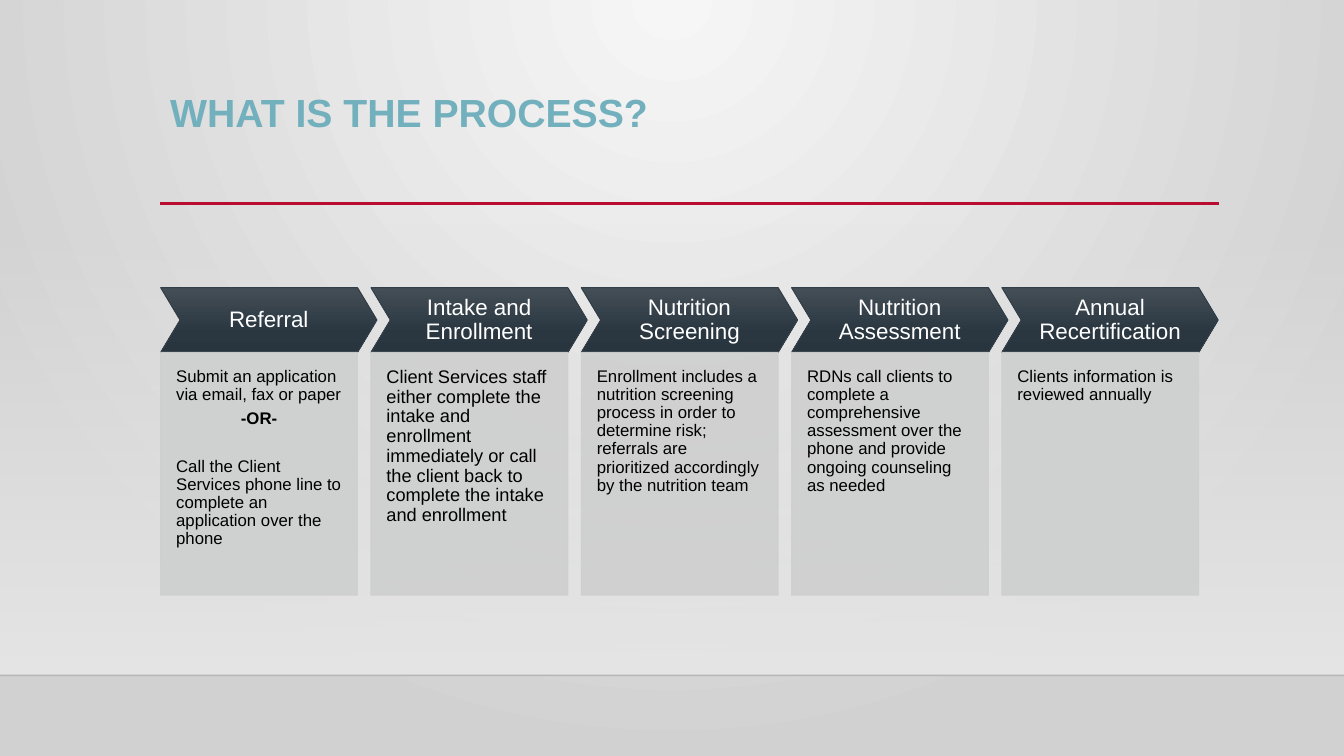
"""Build the slide that shows the five steps of the nutrition service process."""
from dataclasses import dataclass

from lxml import etree
from pptx import Presentation
from pptx.dml.color import RGBColor
from pptx.enum.shapes import MSO_CONNECTOR, MSO_SHAPE
from pptx.enum.text import MSO_ANCHOR, MSO_AUTO_SIZE, PP_ALIGN
from pptx.oxml import parse_xml
from pptx.oxml.ns import nsdecls, qn
from pptx.util import Cm, Pt

CHEVRON, RECTANGLE = MSO_SHAPE.CHEVRON, MSO_SHAPE.RECTANGLE
STRAIGHT = MSO_CONNECTOR.STRAIGHT
TOP, MIDDLE = MSO_ANCHOR.TOP, MSO_ANCHOR.MIDDLE
LEFT, CENTER = PP_ALIGN.LEFT, PP_ALIGN.CENTER
NO_AUTOFIT = MSO_AUTO_SIZE.NONE

SLIDE_WIDTH, SLIDE_HEIGHT = 33.87, 19.05
FLOOR_TOP = 17.02
DOWNWARD = '<a:lin ang="5400000" scaled="0"/>'
FROM_TOP_CENTER = ('<a:path path="circle">'
                   '<a:fillToRect l="43000" t="0" r="43000" b="100000"/></a:path>')


@dataclass(frozen=True)
class Theme:
    """Colours, font and type sizes; gradient stops are (position, colour, opacity)."""
    font: str = "Arial"
    title: str = "72B0BD"
    rule: str = "BA0C2F"
    floor_edge: str = "000001"
    step_edge: str = "333F48"
    panel: str = "CECFCF"
    heading: str = "FFFFFF"
    body: str = "000000"
    title_size: float = 28
    heading_size: float = 16
    body_size: float = 12
    large_body_size: float = 13
    backdrop: tuple = ((0, "F6F6F6", 100), (100, "D2D1D1", 100))
    wall: tuple = ((0, "E7E6E6", 0), (100, "E7E6E6", 100))
    step: tuple = ((0, "434E56", 100), (69, "2A3741", 100), (100, "28343E", 100))


class ProcessSlide:
    """Draws styled elements on one slide, with lengths in centimetres."""

    def __init__(self, slide, theme):
        self.slide = slide
        self.theme = theme

    def gradient(self, fill, parent, stops, direction):
        """Give a fill the listed stops and direction."""
        fill.gradient()
        stop_xml = "".join(
            f'<a:gs pos="{position * 1000}"><a:srgbClr val="{color}">'
            f'<a:alpha val="{opacity * 1000}"/></a:srgbClr></a:gs>'
            for position, color, opacity in stops)
        parent.replace(parent.find(qn("a:gradFill")), parse_xml(
            f'<a:gradFill {nsdecls("a")} rotWithShape="1">'
            f'<a:gsLst>{stop_xml}</a:gsLst>{direction}</a:gradFill>'))

    def fade(self, element, opacity):
        """Make every solid colour of an element partly transparent."""
        for color in element.iter(qn("a:srgbClr")):
            etree.SubElement(color, qn("a:alpha"), val=str(opacity * 1000))

    def backdrop(self):
        """Fill the background and the lighter wall above the floor."""
        fill = self.slide.background.fill
        fill.gradient()
        self.gradient(fill, self.slide.element.find(".//" + qn("p:bgPr")),
                      self.theme.backdrop, FROM_TOP_CENTER)
        wall_top = 5.61
        wall = self.shape(RECTANGLE, 0, wall_top, SLIDE_WIDTH, FLOOR_TOP - wall_top)
        self.gradient(wall.fill, wall.element.spPr, self.theme.wall, DOWNWARD)
        wall.line.fill.background()

    def shape(self, kind, left, top, width, height):
        """Add a preset shape without shadow."""
        shape = self.slide.shapes.add_shape(kind, Cm(left), Cm(top), Cm(width), Cm(height))
        shape.shadow.inherit = False
        return shape

    def rule(self, left, right, y, color, weight, opacity=100):
        """Add a horizontal line."""
        rule = self.slide.shapes.add_connector(STRAIGHT, Cm(left), Cm(y), Cm(right), Cm(y))
        rule.line.color.rgb = RGBColor.from_string(color)
        rule.line.width = Pt(weight)
        if opacity < 100:
            self.fade(rule.element.spPr, opacity)
        etree.SubElement(rule.element.spPr, qn("a:effectLst"))

    def frame(self, shape, anchor, insets):
        """Set wrapping, anchor and insets, and return the text frame."""
        frame = shape.text_frame
        frame.word_wrap = True
        frame.auto_size = NO_AUTOFIT
        frame.vertical_anchor = anchor
        (frame.margin_left, frame.margin_top,
         frame.margin_right, frame.margin_bottom) = map(Cm, insets)
        return frame

    def add_text(self, paragraph, text, size, color, align=LEFT, bold=False, after=0):
        """Format a paragraph and add its run."""
        paragraph.alignment = align
        paragraph.line_spacing = 0.9
        paragraph.space_before = Pt(0)
        paragraph.space_after = Pt(after)
        run = paragraph.add_run()
        run.text = text
        run.font.name = self.theme.font
        run.font.size = Pt(size)
        run.font.bold = bold
        run.font.color.rgb = RGBColor.from_string(color)

    def title(self, text):
        """Place and fill the title placeholder."""
        title = self.slide.shapes.title
        title.left, title.top, title.width, title.height = map(Cm, (4.04, 2.24, 26.67, 2.92))
        frame = self.frame(title, TOP, (0.25, 0.13, 0.25, 0))
        self.add_text(frame.paragraphs[0], text, self.theme.title_size,
                      self.theme.title, bold=True)

    def step(self, left, heading):
        """Add the chevron that names a step."""
        chevron = self.shape(CHEVRON, left, 7.25, 5.45, 1.63)
        chevron.adjustments[0] = 0.3
        self.gradient(chevron.fill, chevron.element.spPr, self.theme.step, DOWNWARD)
        chevron.line.color.rgb = RGBColor.from_string(self.theme.step_edge)
        chevron.line.width = Pt(0.75)
        frame = self.frame(chevron, MIDDLE, (0.2, 0.2, 0.2, 0.2))
        self.add_text(frame.paragraphs[0], heading, self.theme.heading_size,
                      self.theme.heading, CENTER)

    def panel(self, left, details, size):
        """Add the panel that explains a step."""
        panel = self.shape(RECTANGLE, left, 8.88, 4.96, 6.12)
        panel_color = RGBColor.from_string(self.theme.panel)
        panel.fill.solid()
        panel.fill.fore_color.rgb = panel_color
        panel.line.color.rgb = panel_color
        panel.line.width = Pt(0.75)
        self.fade(panel.element.spPr, 90)
        frame = self.frame(panel, TOP, (0.39, 0.39, 0.39, 0.79))
        for index, (text, align, bold, after) in enumerate(details):
            paragraph = frame.add_paragraph() if index else frame.paragraphs[0]
            self.add_text(paragraph, text, size, self.theme.body, align, bold, after)


def plain(text, after=0):
    """Describe a left-aligned paragraph of regular weight."""
    return text, LEFT, False, after


def main():
    """Build and save the slide."""
    theme = Theme()
    steps = [
        ("Referral", theme.body_size,
         [plain("Submit an application via email, fax or paper", 4.2),
          ("-OR-", CENTER, True, 21.2),
          plain("Call the Client Services phone line to complete an application "
                "over the phone")]),
        ("Intake and Enrollment", theme.large_body_size,
         [plain("Client Services staff either complete the intake and enrollment "
                "immediately or call the client back to complete the intake and enrollment")]),
        ("Nutrition Screening", theme.body_size,
         [plain("Enrollment includes a nutrition screening process in order to determine "
                "risk; referrals are prioritized accordingly by the nutrition team")]),
        ("Nutrition Assessment", theme.body_size,
         [plain("RDNs call clients to complete a comprehensive assessment over the phone "
                "and provide ongoing counseling as needed")]),
        ("Annual Recertification", theme.body_size,
         [plain("Clients information is reviewed annually")]),
    ]
    deck = Presentation()
    deck.slide_width, deck.slide_height = Cm(SLIDE_WIDTH), Cm(SLIDE_HEIGHT)
    page = ProcessSlide(deck.slides.add_slide(deck.slide_layouts[5]), theme)
    page.backdrop()
    page.rule(0, SLIDE_WIDTH, FLOOR_TOP, theme.floor_edge, 1, 20)
    page.rule(4.04, 30.73, 5.13, theme.rule, 2.5)
    page.title("WHAT IS THE PROCESS?")
    for index, (heading, size, details) in enumerate(steps):
        left = 4.05 + 5.3 * index
        page.step(left, heading)
        page.panel(left, details, size)
    deck.save("out.pptx")


if __name__ == "__main__":
    main()
